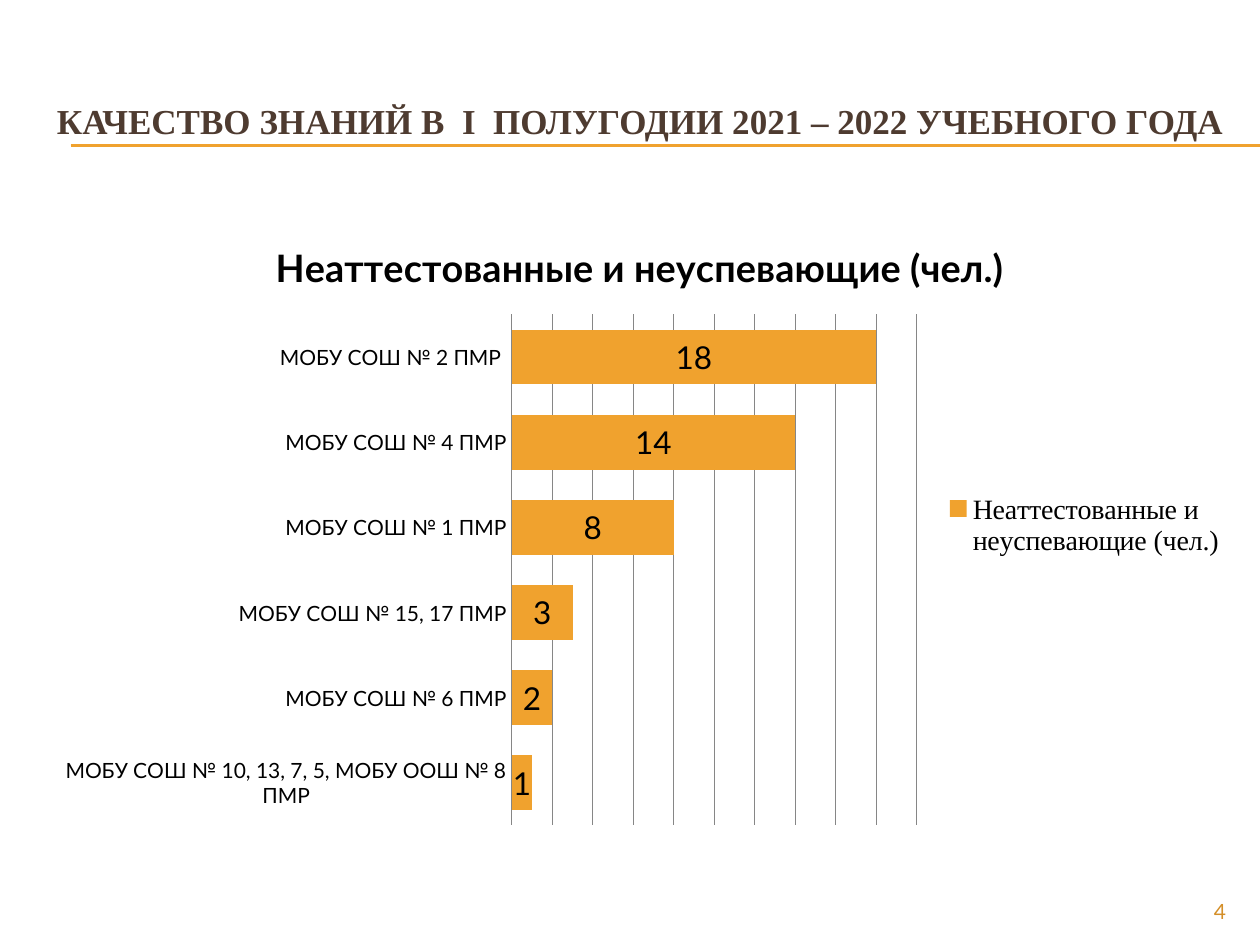
from lxml.etree import SubElement
from pptx import Presentation
from pptx.chart.data import CategoryChartData
from pptx.dml.color import RGBColor
from pptx.enum.chart import XL_CHART_TYPE, XL_LABEL_POSITION, XL_LEGEND_POSITION, XL_TICK_MARK
from pptx.enum.shapes import MSO_CONNECTOR
from pptx.enum.text import MSO_ANCHOR, PP_ALIGN
from pptx.oxml.ns import qn
from pptx.util import Inches, Pt

ORANGE = "F0A22E"
SERIF = "Times New Roman"
SANS = "Lato"
SERIES_NAME = "Неаттестованные и неуспевающие (чел.)"
PUPILS_BY_SCHOOL = {
    "МОБУ СОШ № 10, 13, 7, 5, МОБУ ООШ № 8 ПМР": 1,
    "МОБУ СОШ № 6 ПМР": 2,
    "МОБУ СОШ № 15, 17 ПМР": 3,
    "МОБУ СОШ № 1 ПМР": 8,
    "МОБУ СОШ № 4 ПМР": 14,
    "МОБУ СОШ № 2 ПМР ": 18,
}


def rgb(value):
    """Turn a hex string into a colour."""
    return RGBColor.from_string(value)


def format_font(font, size, name=SANS, color="000000", bold=False):
    """Set the face, size, colour and weight of a font."""
    font.name = name
    font.size = Pt(size)
    font.bold = bold
    font.color.rgb = rgb(color)


def write_text(frame, text, align=PP_ALIGN.LEFT, anchor=MSO_ANCHOR.TOP, **font_format):
    """Write one formatted paragraph into a text frame."""
    frame.word_wrap = True
    frame.vertical_anchor = anchor
    paragraph = frame.paragraphs[0]
    paragraph.alignment = align
    run = paragraph.add_run()
    run.text = text
    format_font(run.font, **font_format)


def add_rule(slide, left, right, top):
    """Draw a thin horizontal line under the heading."""
    rule = slide.shapes.add_connector(
        MSO_CONNECTOR.STRAIGHT, Inches(left), Inches(top), Inches(right), Inches(top))
    rule.line.color.rgb = rgb(ORANGE)
    rule.line.width = Pt(0.75)
    SubElement(rule._element.spPr, qn("a:effectLst"))


def add_heading(slide, left, top, width, height):
    """Place the title and the double rule that runs to the slide edge."""
    for rule_top in (1.15, 1.16):
        add_rule(slide, 0.56, 10, rule_top)
    heading = slide.shapes.title
    heading.left, heading.top = Inches(left), Inches(top)
    heading.width, heading.height = Inches(width), Inches(height)
    write_text(heading.text_frame, "КАЧЕСТВО ЗНАНИЙ В  I  ПОЛУГОДИИ 2021 – 2022 УЧЕБНОГО ГОДА",
               align=PP_ALIGN.CENTER, anchor=MSO_ANCHOR.MIDDLE,
               size=20, name=SERIF, color="4E3B30", bold=True)
    frame = heading.text_frame
    frame.margin_left = frame.margin_right = Inches(0.05)


def format_axes(chart):
    """Show school names and vertical gridlines only."""
    schools = chart.category_axis
    schools.major_tick_mark = XL_TICK_MARK.NONE
    schools.format.line.fill.background()
    format_font(schools.tick_labels.font, 12)
    pupils = chart.value_axis
    pupils.visible = False
    pupils.minimum_scale, pupils.maximum_scale, pupils.major_unit = 0, 20, 2
    pupils.has_major_gridlines = True
    gridline = pupils.major_gridlines.format.line
    gridline.color.rgb = rgb("868686")
    gridline.width = Pt(0.75)


def add_pupils_chart(slide, left, top, width, height):
    """Place the bar chart of pupils by school."""
    data = CategoryChartData()
    data.categories = PUPILS_BY_SCHOOL.keys()
    data.add_series(SERIES_NAME, PUPILS_BY_SCHOOL.values())
    chart = slide.shapes.add_chart(
        XL_CHART_TYPE.BAR_STACKED, Inches(left), Inches(top),
        Inches(width), Inches(height), data).chart
    format_font(chart.font, 18)
    chart.has_title = True
    write_text(chart.chart_title.text_frame, SERIES_NAME,
               align=PP_ALIGN.CENTER, size=21.6, bold=True)
    chart.has_legend = True
    chart.legend.position = XL_LEGEND_POSITION.RIGHT
    chart.legend.include_in_layout = False
    format_font(chart.legend.font, 16, name=SERIF)
    format_axes(chart)

    plot = chart.plots[0]
    plot.gap_width, plot.overlap = 55, 100
    plot.vary_by_categories = False
    bars = plot.series[0]
    bars.format.fill.solid()
    bars.format.fill.fore_color.rgb = rgb(ORANGE)
    labels = bars.data_labels
    labels.show_value = True
    labels.position = XL_LABEL_POSITION.CENTER
    format_font(labels.font, 18)


def add_page_number(slide, left, top, width, height):
    """Place the page number in the lower right corner."""
    page_number = slide.shapes.add_textbox(
        Inches(left), Inches(top), Inches(width), Inches(height))
    write_text(page_number.text_frame, "4", align=PP_ALIGN.RIGHT, size=12, color="D48F29")


def main():
    """Build the slide and save it."""
    deck = Presentation()
    deck.slide_width, deck.slide_height = Inches(10), Inches(7.5)
    slide = deck.slides.add_slide(deck.slide_layouts[5])
    add_heading(slide, 0.33, 0.5, 9.5, 0.92)
    add_pupils_chart(slide, 0.33, 1.7, 9.5, 4.95)
    add_page_number(slide, 9, 7.08, 0.83, 0.27)
    deck.save("out.pptx")


if __name__ == "__main__":
    main()
